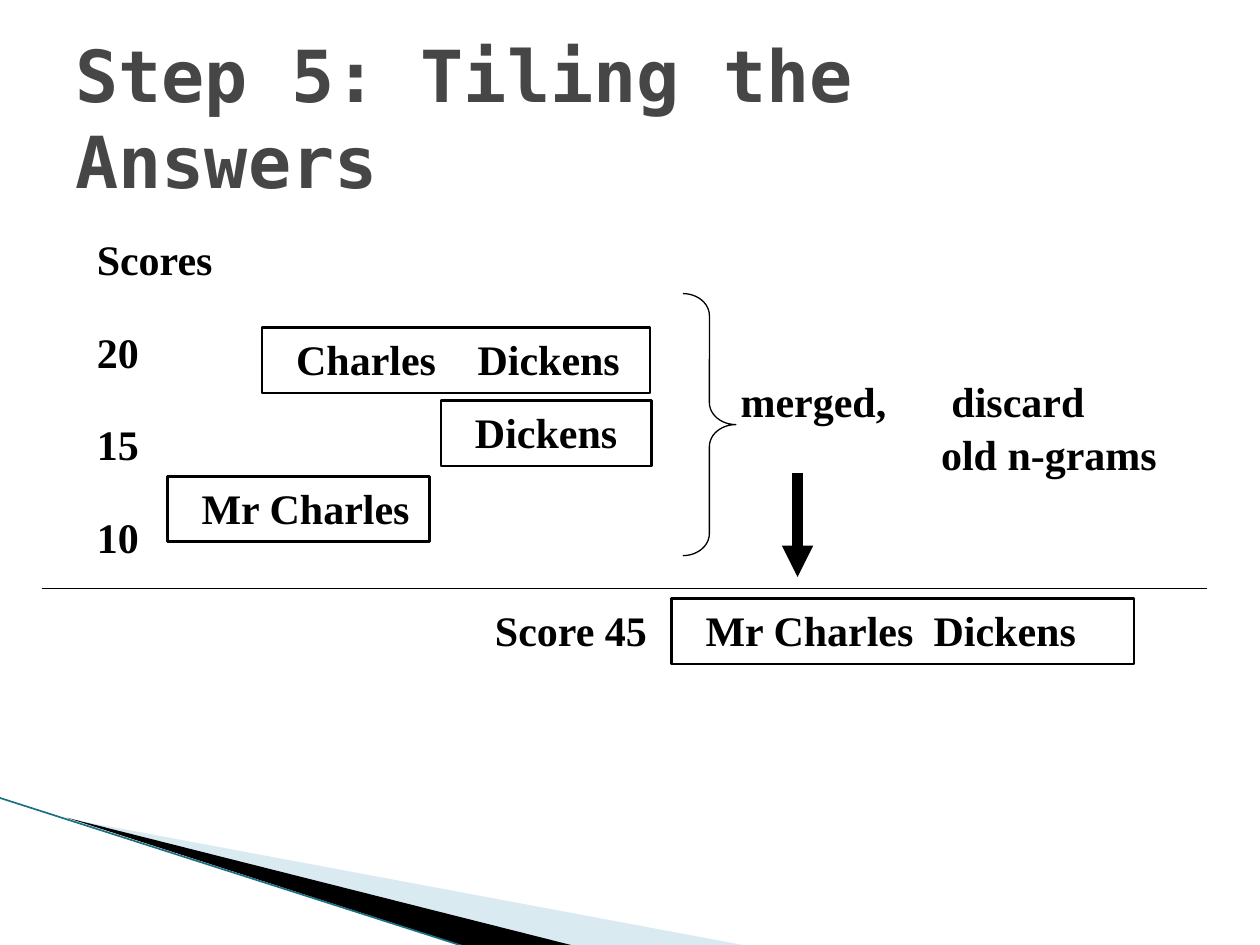
from lxml import etree
from pptx import Presentation
from pptx.dml.color import RGBColor
from pptx.enum.shapes import MSO_CONNECTOR, MSO_SHAPE
from pptx.enum.text import MSO_ANCHOR, PP_ALIGN
from pptx.oxml.ns import qn
from pptx.util import Inches, Pt

BLACK = RGBColor(0x00, 0x00, 0x00)
TITLE_GRAY = RGBColor(0x46, 0x46, 0x46)
PALE_BLUE = RGBColor(0xA0, 0xCB, 0xDC)
TEAL = RGBColor(0x1A, 0x70, 0x84)

prs = Presentation()
prs.slide_width, prs.slide_height = Inches(10), Inches(7.5)
slide = prs.slides.add_slide(prs.slide_layouts[6])
shapes = slide.shapes


def write(frame, lines, font="Times New Roman", size=24, color=BLACK,
          before=0, spacing=1.0, tab=None):
    """Fill a frame with bold paragraphs; before is the gap between them in points."""
    for i, line in enumerate(lines):
        para = frame.paragraphs[0] if i == 0 else frame.add_paragraph()
        if tab:
            tabs = etree.SubElement(para._p.get_or_add_pPr(), qn("a:tabLst"))
            etree.SubElement(tabs, qn("a:tab"), pos=str(Inches(tab)), algn="l")
        para.alignment = PP_ALIGN.LEFT
        para.line_spacing = spacing
        if i:
            para.space_before = Pt(before)
        run = para.add_run()
        run.text = line
        run.font.name, run.font.size, run.font.bold = font, Pt(size), True
        run.font.color.rgb = color


def add_line(start, end, color, width):
    x1, y1, x2, y2 = (Inches(v) for v in (*start, *end))
    line = shapes.add_connector(MSO_CONNECTOR.STRAIGHT, x1, y1, x2, y2)
    line.line.color.rgb, line.line.width = color, Pt(width)
    etree.SubElement(line._element.spPr, qn("a:effectLst"))
    return line


# Corner decoration
wedges = [
    ([(0.55, 6.5), (5.95, 7.51), (4.56, 7.51)], PALE_BLUE, 40),
    ([(0.53, 6.49), (4.57, 7.51), (3.72, 7.52)], BLACK, 100),
]
for points, color, opacity in wedges:
    corners = [(Inches(x), Inches(y)) for x, y in points]
    builder = shapes.build_freeform(*corners[0])
    builder.add_line_segments(corners[1:], close=True)
    wedge = builder.convert_to_shape()
    wedge.shadow.inherit = False
    wedge.fill.solid()
    wedge.fill.fore_color.rgb = color
    wedge.line.fill.background()
    if opacity < 100:
        rgb = wedge._element.spPr.find(qn("a:solidFill")).find(qn("a:srgbClr"))
        etree.SubElement(rgb, qn("a:alpha"), val=str(opacity * 1000))
add_line((-0.01, 6.33), (3.71, 7.52), TEAL, 0.95)

# Title
title = shapes.add_textbox(Inches(0.5), Inches(0.3), Inches(9), Inches(1.25)).text_frame
title.word_wrap = True
title.vertical_anchor = MSO_ANCHOR.MIDDLE
write(title, ["Step 5: Tiling the Answers"], "DejaVu Sans Mono", 41, TITLE_GRAY)

# N-gram tiles: left, top, width, text, tab stop
tiles = [
    (3.5, 3.18, 1.67, "Dickens", None),
    (2.08, 2.6, 3.08, "Charles\tDickens", 1.44),
    (1.33, 3.78, 2.08, "Mr Charles", None),
    (5.33, 4.75, 3.67, "Mr Charles\tDickens", 1.81),
]
for left, top, width, words, tab in tiles:
    tile = shapes.add_shape(MSO_SHAPE.RECTANGLE, Inches(left), Inches(top),
                            Inches(width), Inches(0.52))
    tile.shadow.inherit = False
    tile.fill.background()
    tile.line.color.rgb, tile.line.width = BLACK, Pt(1.5)
    frame = tile.text_frame
    frame.margin_left, frame.margin_right = Inches(0.27), Inches(0)
    frame.vertical_anchor = MSO_ANCHOR.TOP
    write(frame, [words], tab=tab)

# Brace that joins the tiles
brace = shapes.add_shape(MSO_SHAPE.RIGHT_BRACE, Inches(5.42), Inches(2.33),
                         Inches(0.42), Inches(2.08))
brace.adjustments[0], brace.adjustments[1] = 0.417, 0.5
brace.shadow.inherit = False
brace.fill.background()
brace.line.color.rgb, brace.line.width = BLACK, Pt(0.75)

# Labels: left, top, width, height, lines, gap, line spacing
labels = [
    (0.67, 1.85, 1.13, 2.62, ["Scores", "20", "15", "10"], 27, 0.9),
    (5.78, 2.93, 1.4, 0.5, ["merged,"], 0, 1.0),
    (7.37, 2.93, 1.95, 0.9, [" discard", "old n-grams"], 1.5, 1.0),
    (3.83, 4.75, 1.41, 0.5, ["Score 45"], 0, 1.0),
]
for left, top, width, height, lines, gap, spacing in labels:
    label = shapes.add_textbox(Inches(left), Inches(top), Inches(width), Inches(height))
    label.text_frame.word_wrap = False
    write(label.text_frame, lines, before=gap, spacing=spacing)

# Arrow to the merged result, and the rule above it
arrow = add_line((6.33, 3.75), (6.33, 4.58), BLACK, 6)
etree.SubElement(arrow.line._get_or_add_ln(), qn("a:tailEnd"), type="triangle")
add_line((0.33, 4.67), (9.58, 4.67), BLACK, 0.75)

prs.save("out.pptx")
